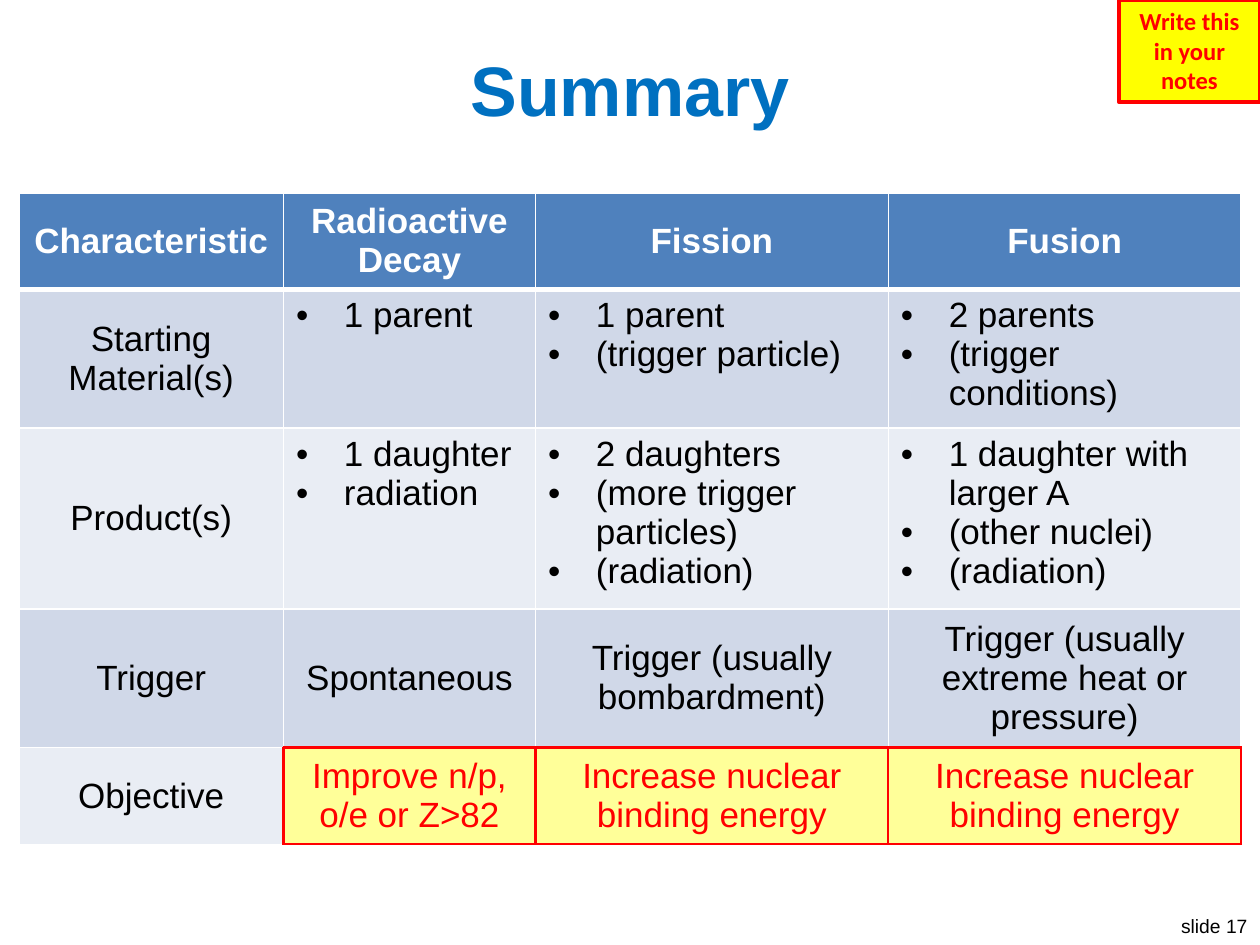
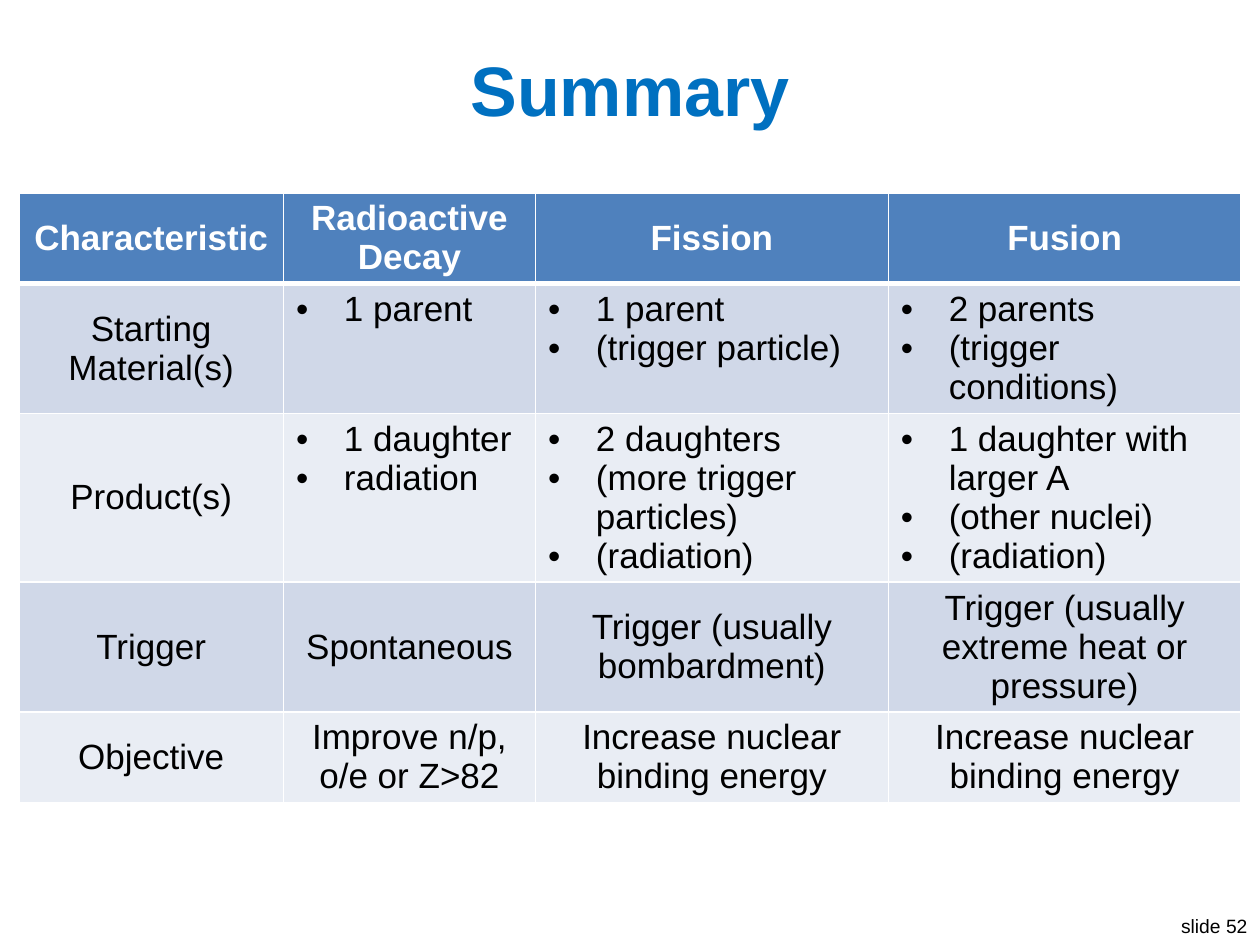
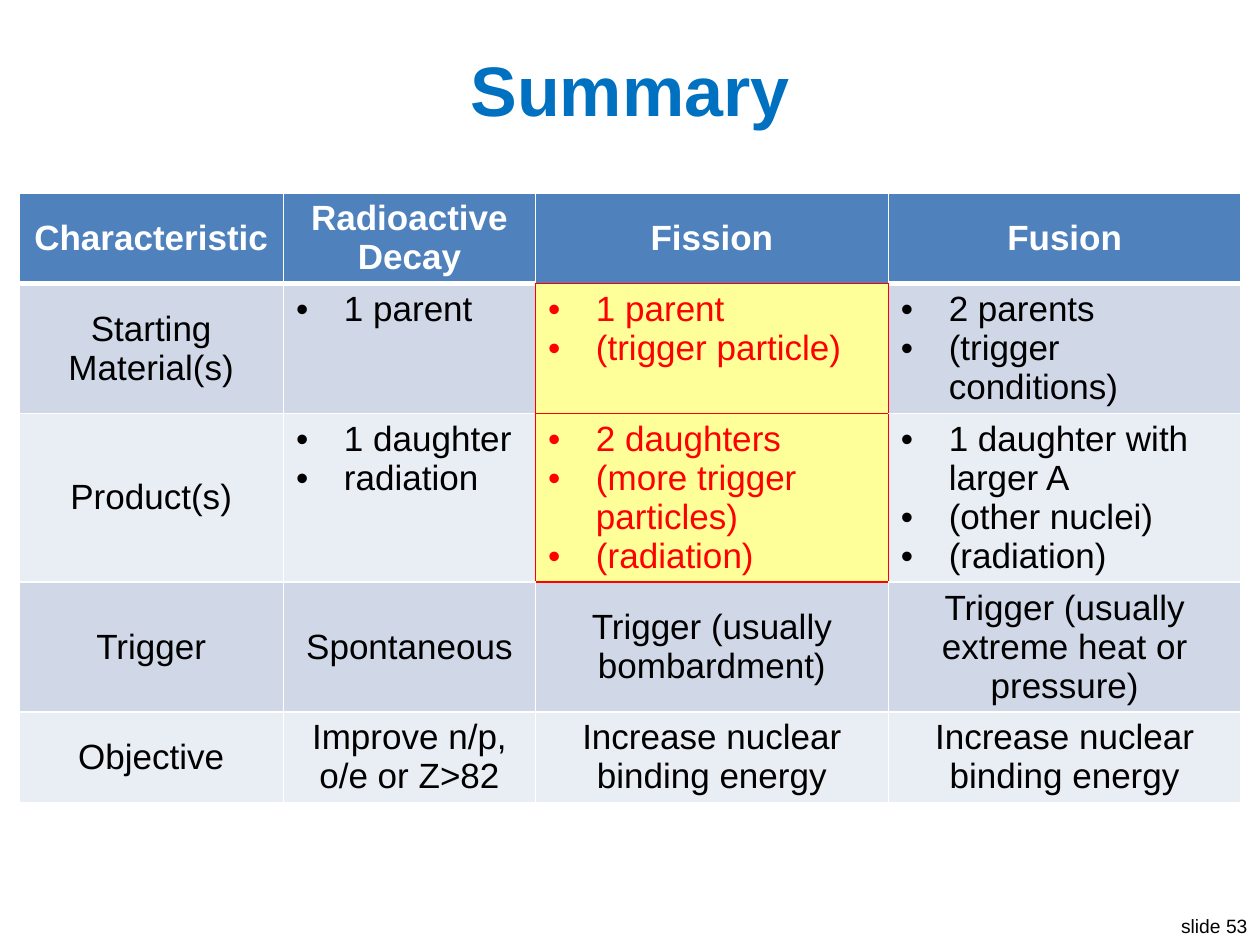
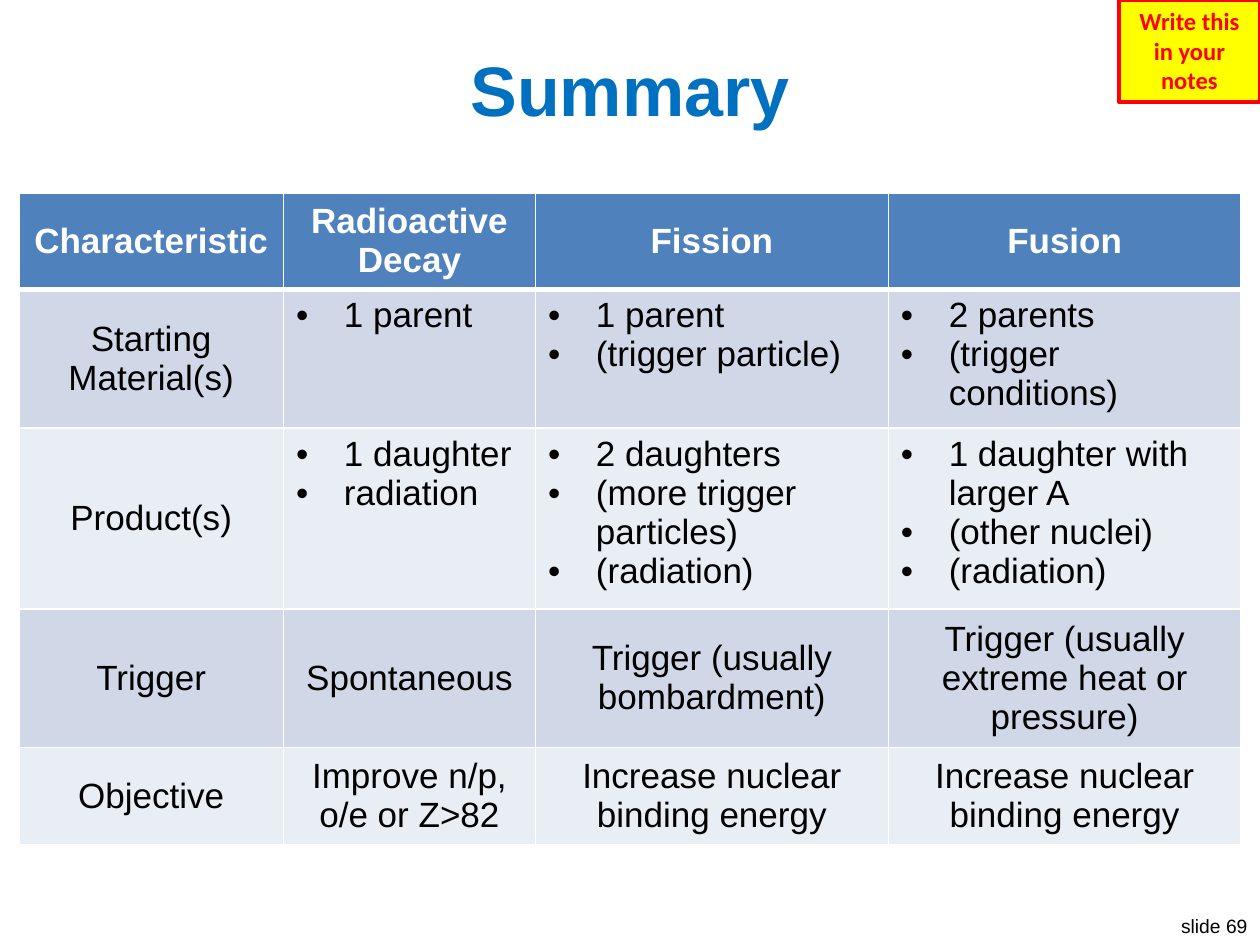
from lxml import etree
from pptx import Presentation
from pptx.dml.color import RGBColor
from pptx.enum.shapes import MSO_SHAPE
from pptx.enum.text import MSO_ANCHOR, MSO_AUTO_SIZE, PP_ALIGN
from pptx.oxml.ns import qn
from pptx.util import Inches, Pt

COLORS = {
    "title": "0070C0",
    "header": "4F81BD",
    "odd": "D0D8E8",
    "even": "E9EDF4",
    "white": "FFFFFF",
    "black": "000000",
    "red": "FF0000",
    "note": "FFFF00",
    "highlight": "FFFF99",
}

FORMATS = {
    "title": {"name": "Arial", "size": Pt(40), "bold": True},
    "note": {"name": "Calibri", "size": Pt(14), "bold": True},
    "number": {"name": "Arial", "size": Pt(11), "bold": False},
    "header": {"name": "Arial", "size": Pt(20), "bold": True},
    "body": {"name": "Arial", "size": Pt(20), "bold": False},
}

COMPARISON = [
    ["Characteristic", "Radioactive Decay", "Fission", "Fusion"],
    ["Starting Material(s)", ["1 parent"],
     ["1 parent", "(trigger particle)"],
     ["2 parents", "(trigger conditions)"]],
    ["Product(s)", ["1 daughter", "radiation"],
     ["2 daughters", "(more trigger particles)", "(radiation)"],
     ["1 daughter with larger A", "(other nuclei)", "(radiation)"]],
    ["Trigger", "Spontaneous", "Trigger (usually bombardment)",
     "Trigger (usually extreme heat or pressure)"],
    ["Objective", "Improve n/p, o/e or Z>82",
     "Increase nuclear binding energy", "Increase nuclear binding energy"],
]

COLUMN_WIDTHS = (2.1, 2, 2.8, 2.8)
LOOSE = {"heights": (0.76, 1.1, 1.43, 1.1, 0.76), "line_spacing": None}
TIGHT = {"heights": (0.72, 1.03, 1.34, 1.03, 0.72), "line_spacing": Pt(22.3)}

SLIDES = [
    {"number": 17, "note": True, "spacing": LOOSE,
     "highlights": {(4, 1), (4, 2), (4, 3)}, "outline": 1.5},
    {"number": 52, "note": False, "spacing": TIGHT, "highlights": set(), "outline": 1},
    {"number": 53, "note": False, "spacing": TIGHT,
     "highlights": {(1, 2), (2, 2)}, "outline": 1},
    {"number": 69, "note": True, "spacing": LOOSE, "highlights": set(), "outline": 1},
]

SIDES = {"lnL": (0, -1), "lnR": (0, 1), "lnT": (-1, 0), "lnB": (1, 0)}


def rgb(color):
    return RGBColor.from_string(COLORS[color])


def write(frame, lines, style, color, align, line_spacing=None):
    for index, line in enumerate(lines):
        paragraph = frame.paragraphs[0] if index == 0 else frame.add_paragraph()
        paragraph.alignment = align
        paragraph.line_spacing = line_spacing
        run = paragraph.add_run()
        run.text = line
        for key, value in FORMATS[style].items():
            setattr(run.font, key, value)
        run.font.color.rgb = rgb(color)


def add_bullets(frame):
    for paragraph in frame.paragraphs:
        properties = paragraph._p.get_or_add_pPr()
        properties.set("marL", str(Inches(0.38)))
        properties.set("indent", str(Inches(-0.38)))
        etree.SubElement(properties, qn("a:buFont"), typeface="Arial")
        etree.SubElement(properties, qn("a:buChar"), char="•")


def add_border(cell, side, color, width):
    line = etree.SubElement(cell._tc.get_or_add_tcPr(), qn(f"a:{side}"), w=str(Pt(width)))
    fill = etree.SubElement(line, qn("a:solidFill"))
    etree.SubElement(fill, qn("a:srgbClr"), val=COLORS[color])


def add_borders(cell, row, column, highlights, outline):
    for side, (down, across) in SIDES.items():
        neighbour = (row + down, column + across)
        if highlights & {(row, column), neighbour}:
            add_border(cell, side, "red", outline)
        else:
            under_header = (row, side) in ((0, "lnB"), (1, "lnT"))
            add_border(cell, side, "white", 3 if under_header else 1)


def add_title(slide):
    title = slide.shapes.add_textbox(Inches(0.2), Inches(0.3), Inches(9.6), Inches(0.8))
    title.text_frame.word_wrap = True
    title.text_frame.vertical_anchor = MSO_ANCHOR.MIDDLE
    write(title.text_frame, ["Summary"], "title", "title", PP_ALIGN.CENTER)


def add_number(slide, number):
    footer = slide.shapes.add_textbox(Inches(9.25), Inches(7.21), Inches(0.75), Inches(0.29))
    footer.text_frame.word_wrap = False
    footer.text_frame.auto_size = MSO_AUTO_SIZE.SHAPE_TO_FIT_TEXT
    write(footer.text_frame, [f"slide {number}"], "number", "black", PP_ALIGN.RIGHT)


def add_note(slide):
    note = slide.shapes.add_shape(
        MSO_SHAPE.RECTANGLE, Inches(8.88), Inches(0), Inches(1.12), Inches(0.81))
    note.shadow.inherit = False
    note.fill.solid()
    note.fill.fore_color.rgb = rgb("note")
    note.line.color.rgb = rgb("red")
    note.line.width = Pt(2.25)
    note.text_frame.word_wrap = True
    note.text_frame.auto_size = MSO_AUTO_SIZE.SHAPE_TO_FIT_TEXT
    note.text_frame.vertical_anchor = MSO_ANCHOR.TOP
    write(note.text_frame, ["Write this in your notes"], "note", "red", PP_ALIGN.CENTER)


def fill_cell(cell, content, row, highlighted, line_spacing):
    if highlighted:
        fill, color = "highlight", "red"
    elif row == 0:
        fill, color = "header", "white"
    else:
        fill, color = ("odd" if row % 2 else "even"), "black"
    cell.fill.solid()
    cell.fill.fore_color.rgb = rgb(fill)
    style = "body" if row else "header"
    if isinstance(content, list):
        write(cell.text_frame, content, style, color, PP_ALIGN.LEFT, line_spacing)
        add_bullets(cell.text_frame)
    else:
        cell.vertical_anchor = MSO_ANCHOR.MIDDLE
        write(cell.text_frame, [content], style, color, PP_ALIGN.CENTER, line_spacing)


def add_comparison(slide, spacing, highlights, outline):
    heights = spacing["heights"]
    comparison = slide.shapes.add_table(
        len(COMPARISON), len(COLUMN_WIDTHS), Inches(0.15), Inches(1.53),
        Inches(sum(COLUMN_WIDTHS)), Inches(sum(heights))).table
    comparison.horz_banding = False
    for column, width in zip(comparison.columns, COLUMN_WIDTHS):
        column.width = Inches(width)
    for row, height in zip(comparison.rows, heights):
        row.height = Inches(height)
    for row, contents in enumerate(COMPARISON):
        for column, content in enumerate(contents):
            cell = comparison.cell(row, column)
            add_borders(cell, row, column, highlights, outline)
            fill_cell(cell, content, row, (row, column) in highlights,
                      spacing["line_spacing"])


def main():
    deck = Presentation()
    deck.slide_width, deck.slide_height = Inches(10), Inches(7.5)
    for summary in SLIDES:
        slide = deck.slides.add_slide(deck.slide_layouts[6])
        add_number(slide, summary["number"])
        add_title(slide)
        if summary["note"]:
            add_note(slide)
        add_comparison(slide, summary["spacing"], summary["highlights"], summary["outline"])
    deck.save("out.pptx")


if __name__ == "__main__":
    main()
